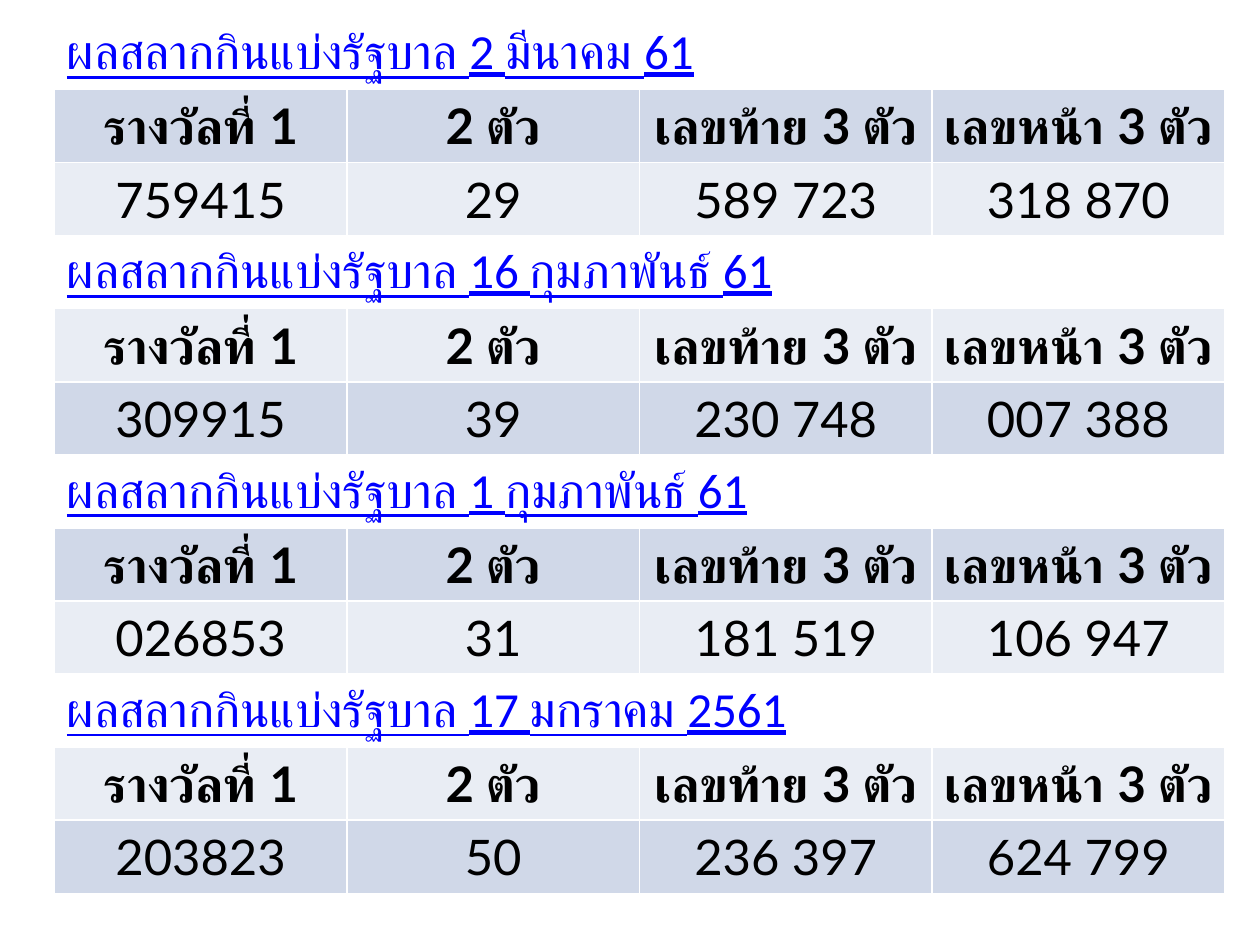
from pptx import Presentation
from pptx.dml.color import RGBColor
from pptx.enum.text import MSO_ANCHOR, PP_ALIGN
from pptx.util import Pt

TITLE = "ผลสลากกินแบ่งรัฐบาล"
HEADERS = ["รางวัลที่ 1", "2 ตัว", "เลขท้าย 3 ตัว", "เลขหน้า 3 ตัว"]
DRAWS = [
    ("2 มีนาคม 61", ["759415", "29", "589 723", "318 870"]),
    ("16 กุมภาพันธ์ 61", ["309915", "39", "230 748", "007 388"]),
    ("1 กุมภาพันธ์ 61", ["026853", "31", "181 519", "106 947"]),
    ("17 มกราคม 2561", ["203823", "50", "236 397", "624 799"]),
]
BANDS = ["D0D8E8", "E9EDF4"]
LINK_BLUE, BLACK = "0000FF", "000000"
LEFT, TOP = 31, 9.4
COLUMN_WIDTH, ROW_HEIGHT = 167.2, 41.76
ROWS_PER_DRAW = 3


def color(value):
    return RGBColor.from_string(value)


def write(cell, text, font_name, text_color, bold=False, underline=False):
    cell.text = text
    cell.vertical_anchor = MSO_ANCHOR.MIDDLE
    font = cell.text_frame.paragraphs[0].font
    font.name, font.size = font_name, Pt(28)
    font.bold, font.underline = bold, underline
    font.color.rgb = color(text_color)


def fill_title(table, row, date):
    cell = table.cell(row, 0)
    cell.merge(table.cell(row, len(HEADERS) - 1))
    write(cell, f"{TITLE} {date}", "Calibri", LINK_BLUE, underline=True)
    for column in range(len(HEADERS)):
        table.cell(row, column).fill.background()


def fill_row(table, row, texts, band, bold):
    for column, text in enumerate(texts):
        cell = table.cell(row, column)
        write(cell, text, "Lato", BLACK, bold=bold)
        cell.text_frame.paragraphs[0].alignment = PP_ALIGN.CENTER
        cell.margin_left = cell.margin_right = Pt(2.2)
        cell.fill.solid()
        cell.fill.fore_color.rgb = color(band)


presentation = Presentation()
presentation.slide_width, presentation.slide_height = Pt(720), Pt(540)
slide = presentation.slides.add_slide(presentation.slide_layouts[6])

row_count = ROWS_PER_DRAW * len(DRAWS)
table = slide.shapes.add_table(
    row_count, len(HEADERS), Pt(LEFT), Pt(TOP),
    Pt(COLUMN_WIDTH * len(HEADERS)), Pt(ROW_HEIGHT * row_count),
).table
for column in table.columns:
    column.width = Pt(COLUMN_WIDTH)
for row in table.rows:
    row.height = Pt(ROW_HEIGHT)

for index, (date, numbers) in enumerate(DRAWS):
    first = index * ROWS_PER_DRAW
    fill_title(table, first, date)
    fill_row(table, first + 1, HEADERS, BANDS[index % 2], bold=True)
    fill_row(table, first + 2, numbers, BANDS[(index + 1) % 2], bold=False)

presentation.save("out.pptx")
